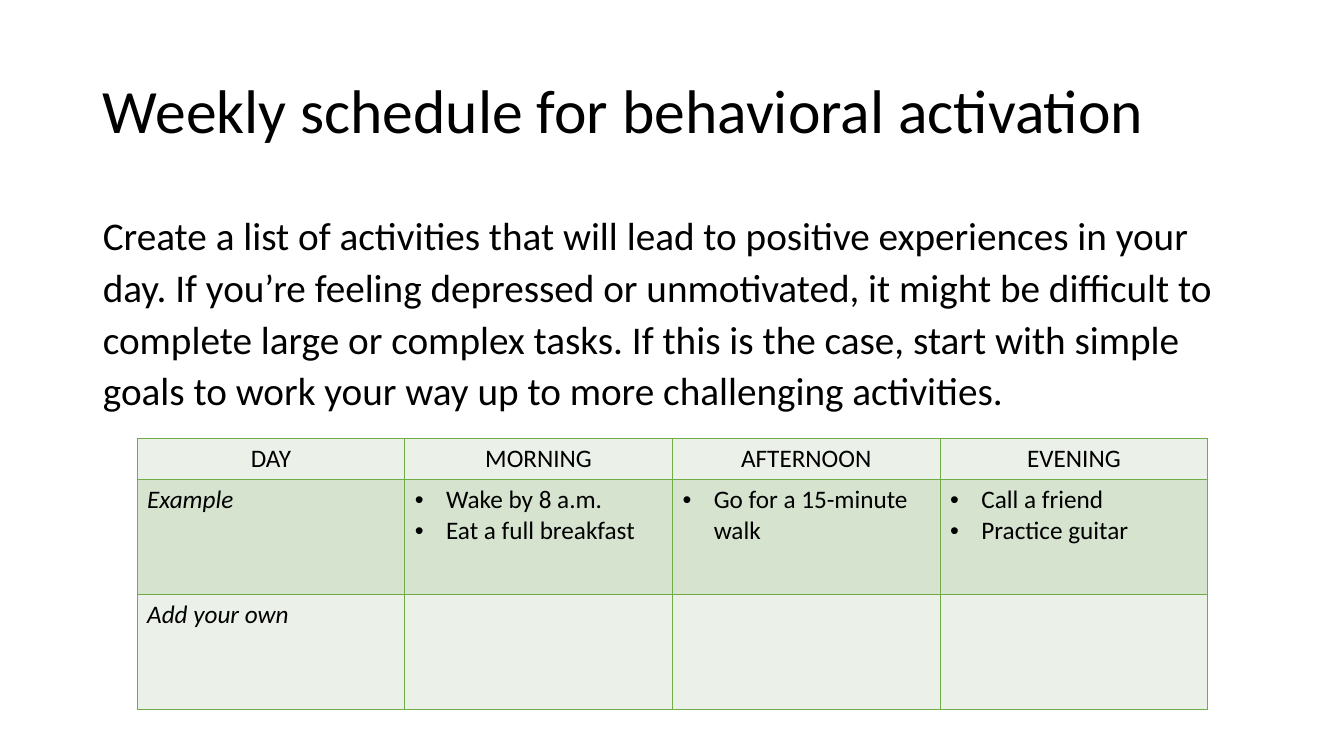
from dataclasses import dataclass

import pptx
import pptx.dml.color
import pptx.enum.text
import pptx.oxml
import pptx.oxml.ns
import pptx.util
from pptx.dml.color import RGBColor
from pptx.util import Inches

BLACK = RGBColor(0x00, 0x00, 0x00)
GREEN = RGBColor(0x70, 0xAD, 0x47)
PALE = RGBColor(0xEB, 0xF1, 0xE9)
LIGHT = RGBColor(0xD5, 0xE3, 0xCF)
FONT = "Calibri"
INDENT = Inches(0.31)
ALIGN = pptx.enum.text.PP_ALIGN
ANCHOR = pptx.enum.text.MSO_ANCHOR


@dataclass
class Cell:
    lines: tuple[str, ...] = ()
    align: ALIGN = ALIGN.LEFT
    italic: bool = False
    bullets: bool = False


@dataclass
class Row:
    height: float
    fill: RGBColor
    cells: list[Cell]


SCHEDULE = [
    Row(0.38, PALE, [Cell((name,), align=ALIGN.CENTER)
                     for name in ("DAY", "MORNING", "AFTERNOON", "EVENING")]),
    Row(1.14, LIGHT, [
        Cell(("Example",), italic=True),
        Cell(("Wake by 8 a.m.", "Eat a full breakfast"), bullets=True),
        Cell(("Go for a 15-minute walk",), bullets=True),
        Cell(("Call a friend", "Practice guitar"), bullets=True),
    ]),
    Row(1.14, PALE, [Cell(("Add your own",), italic=True), Cell(), Cell(), Cell()]),
]


def add_xml(parent, xml: str) -> None:
    """Append a drawing element to its parent."""
    ns = pptx.oxml.ns.nsdecls("a")
    parent.append(pptx.oxml.parse_xml(xml.replace(">", f" {ns}>", 1)))


def format_font(p, size: float, italic: bool = False) -> None:
    for r in p.runs:
        r.font.name = FONT
        r.font.size = pptx.util.Pt(size)
        r.font.italic = italic
        r.font.color.rgb = BLACK


def fill_placeholder(sp, text: str, top: float, height: float, size: float,
                     spacing: float, anchor: ANCHOR) -> None:
    sp.left, sp.top = Inches(0.92), Inches(top)
    sp.width, sp.height = Inches(11.5), Inches(height)
    tf = sp.text_frame
    tf.text = text
    tf.word_wrap = True
    tf.auto_size = pptx.enum.text.MSO_AUTO_SIZE.NONE
    tf.vertical_anchor = anchor
    p = tf.paragraphs[0]
    p.alignment = ALIGN.LEFT
    p.line_spacing = spacing
    p.space_before = pptx.util.Pt(0)
    pPr = p._p.get_or_add_pPr()
    pPr.set("marL", "0")
    pPr.set("indent", "0")
    add_xml(pPr, "<a:buNone></a:buNone>")
    format_font(p, size)


def fill_cell(tc, cell: Cell, fill: RGBColor) -> None:
    tf = tc.text_frame
    tf.text = "\n".join(cell.lines)
    for p in tf.paragraphs:
        p.alignment = cell.align
        if cell.bullets:
            pPr = p._p.get_or_add_pPr()
            pPr.set("marL", str(INDENT))
            pPr.set("indent", str(-INDENT))
            add_xml(pPr, '<a:buFont typeface="Arial"></a:buFont>')
            add_xml(pPr, '<a:buChar char="•"></a:buChar>')
        format_font(p, 18, cell.italic)
    # Borders come before the fill in the cell properties
    for side in ("lnL", "lnR", "lnT", "lnB"):
        add_xml(tc._tc.get_or_add_tcPr(),
                f'<a:{side} w="{pptx.util.Pt(1)}"><a:solidFill>'
                f'<a:srgbClr val="{GREEN}"/></a:solidFill></a:{side}>')
    tc.fill.solid()
    tc.fill.fore_color.rgb = fill


def add_schedule(s, rows: list[Row]) -> None:
    columns = len(rows[0].cells)
    height = sum(row.height for row in rows)
    table = s.shapes.add_table(len(rows), columns, Inches(1.36), Inches(4.35),
                               Inches(10.62), Inches(height)).table
    for i, row in enumerate(rows):
        table.rows[i].height = Inches(row.height)
        for j, cell in enumerate(row.cells):
            fill_cell(table.cell(i, j), cell, row.fill)


def main() -> None:
    prs = pptx.Presentation()
    prs.slide_width, prs.slide_height = Inches(13.33), Inches(7.5)
    s = prs.slides.add_slide(prs.slide_layouts[1])

    # Title and introduction
    fill_placeholder(s.shapes.title, "Weekly schedule for behavioral activation",
                     0.4, 1.45, 44, 0.9, ANCHOR.MIDDLE)
    fill_placeholder(
        s.placeholders[1],
        "Create a list of activities that will lead to positive experiences in your day. "
        "If you’re feeling depressed or unmotivated, it might be difficult to complete "
        "large or complex tasks. If this is the case, start with simple goals to work "
        "your way up to more challenging activities.",
        2, 2.67, 28, 1.1, ANCHOR.TOP)

    # Weekly schedule
    add_schedule(s, SCHEDULE)

    prs.save("out.pptx")


if __name__ == "__main__":
    main()
